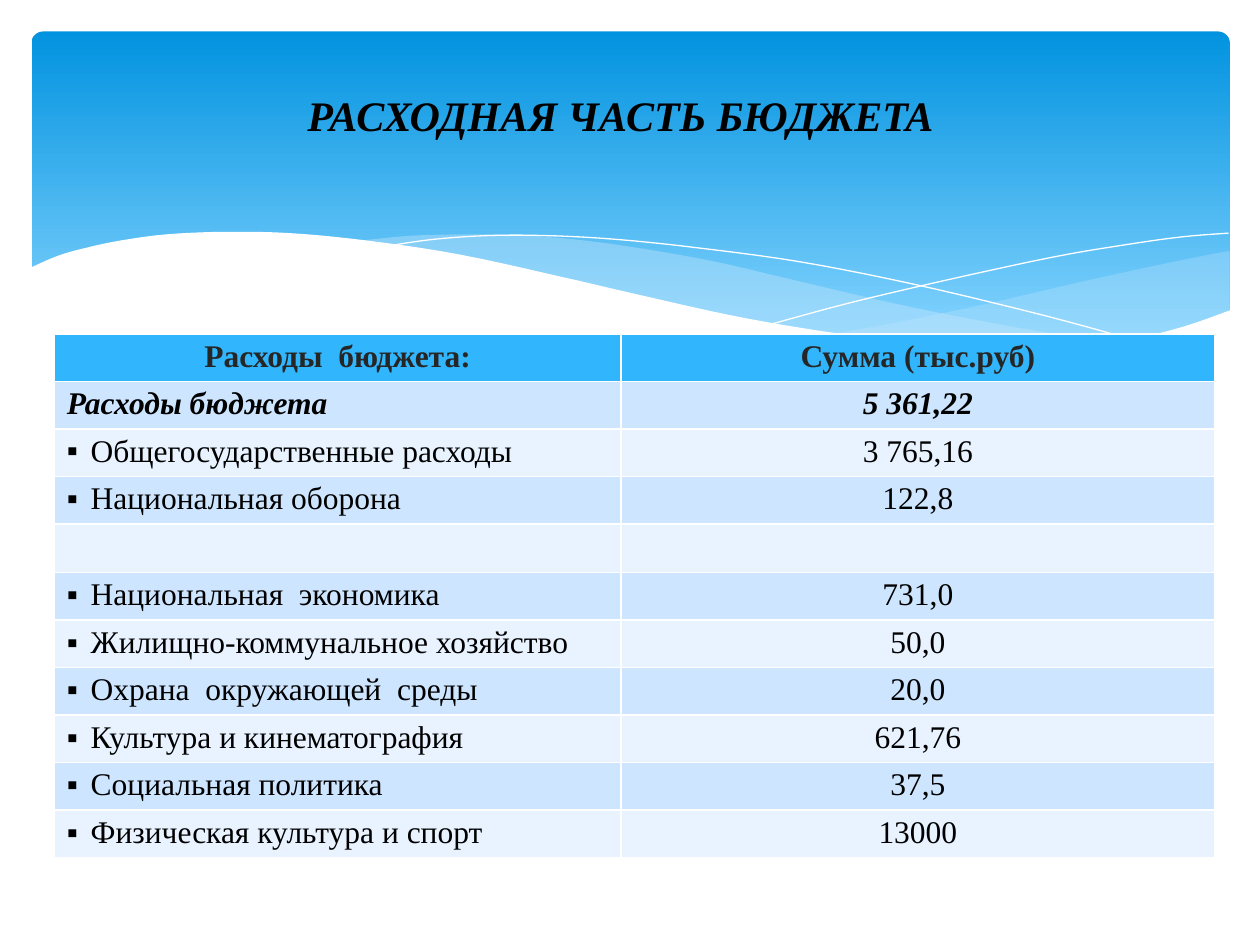
from collections import namedtuple

from lxml.etree import SubElement
from pptx import Presentation
from pptx.dml.color import RGBColor
from pptx.enum.shapes import MSO_SHAPE
from pptx.enum.text import MSO_ANCHOR, PP_ALIGN
from pptx.oxml.ns import qn
from pptx.util import Inches, Pt

Box = namedtuple("Box", "left top width height")

FONT = "Times New Roman"
BLACK = RGBColor(0x00, 0x00, 0x00)
WHITE = RGBColor(0xFF, 0xFF, 0xFF)
HEADER_TEXT = RGBColor(0x26, 0x26, 0x26)
HEADER_FILL = RGBColor(0x31, 0xB6, 0xFD)
BAND_FILLS = (RGBColor(0xE8, 0xF3, 0xFF), RGBColor(0xCD, 0xE5, 0xFE))
SKY_TOP = RGBColor(0x02, 0x93, 0xE0)
SKY_BOTTOM = RGBColor(0x83, 0xD3, 0xFE)
RIBBON = RGBColor(0xC6, 0xE7, 0xFC)

RIGHT_RIBBON_TOP = [(9.76, 1.99), (9.35, 2.07), (8.61, 2.23), (7.79, 2.42), (7.06, 2.57), (6.61, 2.65)]
RIGHT_RIBBON_BOTTOM = [(6.61, 2.65), (7.05, 2.71), (7.57, 2.76), (8.03, 2.78), (8.54, 2.76),
                       (8.97, 2.7), (9.35, 2.61), (9.76, 2.47)]
LONG_RIBBON_TOP = [(8.93, 2.73), (8.37, 2.65), (7.75, 2.54), (7.06, 2.4), (6.29, 2.22), (5.69, 2.08),
                   (5.14, 1.98), (4.65, 1.91), (4.2, 1.87), (3.8, 1.86), (3.28, 1.87), (2.86, 1.91)]
LONG_RIBBON_BOTTOM = [(2.86, 1.91), (3.42, 1.99), (4.04, 2.11), (4.49, 2.22), (5.3, 2.4), (6.01, 2.55),
                      (6.65, 2.66), (7.22, 2.74), (7.73, 2.77), (8.18, 2.78), (8.57, 2.77), (8.93, 2.73)]
FALLING_LINE = [(3.09, 1.95), (3.44, 1.9), (3.87, 1.87), (4.33, 1.87), (4.89, 1.9), (5.56, 1.97),
                (6.36, 2.08), (7.27, 2.26), (8.31, 2.51), (9.07, 2.72)]
RISING_LINE = [(6.13, 2.57), (6.72, 2.41), (7.48, 2.23), (8.36, 2.04), (8.95, 1.94), (9.38, 1.88), (9.75, 1.85)]
WHITE_WAVE = [(9.77, 2.46), (9.4, 2.59), (8.99, 2.69), (8.5, 2.75), (8.09, 2.77), (7.61, 2.75), (7.08, 2.7),
              (6.47, 2.62), (5.79, 2.5), (5.03, 2.33), (4.47, 2.2), (3.65, 2.02), (2.92, 1.91), (2.3, 1.85),
              (1.77, 1.84), (1.32, 1.86), (0.95, 1.91), (0.67, 1.97), (0.46, 2.03), (0.23, 2.13)]
WAVE_BASE = [(0.23, 3.29), (9.77, 3.29)]

HEADERS = ("Расходы  бюджета:", "Сумма (тыс.руб)")
TOTAL = ("Расходы бюджета", "5 361,22")
EXPENSES = [
    ("Общегосударственные расходы", "3 765,16"),
    ("Национальная оборона", "122,8"),
    ("", ""),
    ("Национальная  экономика", "731,0"),
    ("Жилищно-коммунальное хозяйство", "50,0"),
    ("Охрана  окружающей  среды", "20,0"),
    ("Культура и кинематография", "621,76"),
    ("Социальная политика", "37,5"),
    ("Физическая культура и спорт", "13000"),
]


def smooth(knots, steps=5):
    """Return points on a Catmull-Rom curve through the knots."""
    padded = [knots[0], *knots, knots[-1]]
    points = []
    for a, b, c, d in zip(padded, padded[1:], padded[2:], padded[3:]):
        for step in range(steps):
            t = step / steps
            points.append(tuple(
                (2 * q + (r - p) * t + (2 * p - 5 * q + 4 * r - s) * t ** 2
                 + (3 * q - p - 3 * r + s) * t ** 3) / 2
                for p, q, r, s in zip(a, b, c, d)))
    return points + [knots[-1]]


def add_outline(page, box, points, closed):
    """Draw a freeform through points given in inches from the box corner."""
    places = [(box.left + Inches(x), box.top + Inches(y)) for x, y in points]
    builder = page.shapes.build_freeform(*places[0])
    builder.add_line_segments(places[1:], close=closed)
    shape = builder.convert_to_shape()
    shape.shadow.inherit = False
    return shape


def add_area(page, box, points, color, opacity=100):
    """Draw a filled area without an outline."""
    area = add_outline(page, box, points, True)
    area.line.fill.background()
    area.fill.solid()
    area.fill.fore_color.rgb = color
    if opacity < 100:
        tint = area.fill._xPr.find(qn("a:solidFill"))[0]
        SubElement(tint, qn("a:alpha"), val=str(opacity * 1000))


def add_hairline(page, box, points):
    """Draw an open white curve."""
    curve = add_outline(page, box, points, False)
    curve.fill.background()
    curve.line.color.rgb = WHITE
    curve.line.width = Pt(0)


def add_backdrop(page, box):
    """Draw the gradient panel and the waves that cut its lower edge."""
    panel = page.shapes.add_shape(
        MSO_SHAPE.ROUNDED_RECTANGLE, box.left + Inches(0.25), box.top + Inches(0.25),
        box.width - Inches(0.49), Inches(2.7))
    panel.adjustments[0] = 0.034
    panel.shadow.inherit = False
    panel.line.fill.background()
    panel.fill.gradient()
    panel.fill.gradient_angle = 270
    for stop, color, position in zip(panel.fill.gradient_stops, (SKY_TOP, SKY_BOTTOM), (0, 0.9)):
        stop.color.rgb = color
        stop.position = position
    add_area(page, box, smooth(RIGHT_RIBBON_TOP) + smooth(RIGHT_RIBBON_BOTTOM), RIBBON, 29)
    add_area(page, box, smooth(LONG_RIBBON_TOP) + smooth(LONG_RIBBON_BOTTOM), RIBBON, 40)
    for knots in (FALLING_LINE, RISING_LINE):
        add_hairline(page, box, smooth(knots))
    add_area(page, box, smooth(WHITE_WAVE) + WAVE_BASE, WHITE)


def format_span(span, size, color, bold, italic=False):
    """Set the font of a run."""
    span.font.name = FONT
    span.font.size = Pt(size)
    span.font.color.rgb = color
    span.font.bold = bold
    span.font.italic = italic


def place_title(page, box):
    """Place the title placeholder above the backdrop."""
    title = page.shapes.title
    title.left, title.top, title.width, title.height = box
    title.element.getparent().append(title.element)
    frame = title.text_frame
    frame.text = "РАСХОДНАЯ ЧАСТЬ БЮДЖЕТА"
    frame.vertical_anchor = MSO_ANCHOR.BOTTOM
    frame.margin_left = Inches(0.3)
    frame.margin_bottom = Inches(0.43)
    para = frame.paragraphs[0]
    para.alignment = PP_ALIGN.CENTER
    para.line_spacing = 1.0
    para.space_before = Pt(0)
    format_span(para.runs[0], 24, BLACK, True, True)


def add_bullet(para):
    """Give a paragraph a square bullet with a hanging indent."""
    properties = para._p.get_or_add_pPr()
    properties.set("marL", str(Inches(0.19)))
    properties.set("indent", str(-Inches(0.19)))
    SubElement(properties, qn("a:buFont"), typeface=FONT)
    SubElement(properties, qn("a:buChar"), char="▪")


def add_budget_table(page, box):
    """Add the table of expenses with a header and banded rows."""
    rows = [HEADERS, TOTAL, *EXPENSES]
    table = page.shapes.add_table(len(rows), 2, *box).table
    table.columns[0].width = Inches(4.5)
    table.columns[1].width = box.width - Inches(4.5)
    for row_index, texts in enumerate(rows):
        header, total = row_index == 0, row_index == 1
        for column_index, text in enumerate(texts):
            cell = table.cell(row_index, column_index)
            cell.margin_top = cell.margin_bottom = Inches(0.04)
            cell.fill.solid()
            cell.fill.fore_color.rgb = HEADER_FILL if header else BAND_FILLS[row_index % 2]
            cell.text_frame.text = text
            para = cell.text_frame.paragraphs[0]
            if header or column_index == 1:
                para.alignment = PP_ALIGN.CENTER
            elif text and not total:
                add_bullet(para)
            for span in para.runs:
                format_span(span, 18, HEADER_TEXT if header else BLACK, header or total, total)


def main():
    """Build the slide and save the deck."""
    deck = Presentation()
    deck.slide_width, deck.slide_height = Inches(10), Inches(7.5)
    page = deck.slides.add_slide(deck.slide_layouts[5])
    add_backdrop(page, Box(0, 0, deck.slide_width, deck.slide_height))
    place_title(page, Box(Inches(0.9), Inches(0.6), Inches(7.85), Inches(0.94)))
    add_budget_table(page, Box(Inches(0.43), Inches(2.65), Inches(9.21), Inches(4.15)))
    deck.save("out.pptx")


if __name__ == "__main__":
    main()
